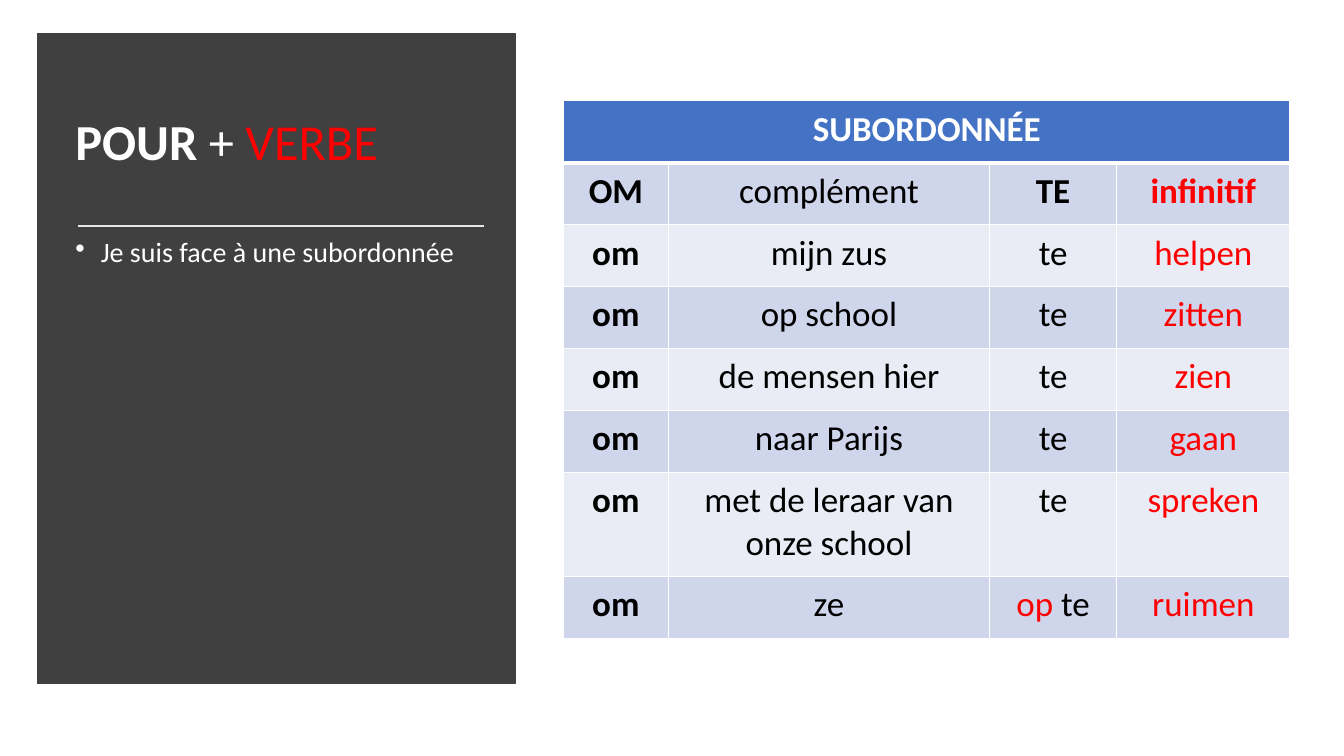
"""Build the slide on POUR + VERBE with its table of subordinate clauses."""
from dataclasses import dataclass
from lxml import etree
from pptx import Presentation
from pptx.dml.color import RGBColor
from pptx.enum import shapes, text
from pptx.oxml import ns
from pptx.util import Cm, Pt


@dataclass(frozen=True)
class Theme:
    font: str = "Calibri"
    panel: str = "404040"
    rule: str = "E7E6E6"
    head: str = "4472C4"
    bands: tuple = ("E9EBF5", "CFD5EA")
    white: str = "FFFFFF"
    black: str = "000000"
    red: str = "FF0000"
    title: int = 36
    body: int = 20
    cell: int = 25


theme = Theme()


def add_run(para, words, size, color, bold=False):
    run = para.add_run()
    run.text = words
    run.font.name = theme.font
    run.font.size = Pt(size)
    run.font.bold = bold
    run.font.color.rgb = RGBColor.from_string(color)


def add_edge(props, index, side, width):
    edge = etree.Element(ns.qn(f"a:ln{side}"), w=str(Pt(width)))
    fill = etree.SubElement(edge, ns.qn("a:solidFill"))
    etree.SubElement(fill, ns.qn("a:srgbClr"), val=theme.white)
    props.insert(index, edge)


deck = Presentation()
deck.slide_width, deck.slide_height = Cm(33.87), Cm(19.05)
slide = deck.slides.add_slide(deck.slide_layouts[6])

panel = slide.shapes.add_shape(
    shapes.MSO_SHAPE.RECTANGLE, Cm(0.94), Cm(0.84), Cm(12.04), Cm(16.38))
panel.shadow.inherit = False
panel.fill.solid()
panel.fill.fore_color.rgb = RGBColor.from_string(theme.panel)
panel.line.color.rgb = RGBColor.from_string(theme.panel)
panel.line.width = Pt(10)
panel.line.width = Pt(1)

title = slide.shapes.add_textbox(Cm(1.65), Cm(1.78), Cm(10.62), Cm(3.73))
title.text_frame.word_wrap = True
title.text_frame.vertical_anchor = text.MSO_ANCHOR.MIDDLE
para = title.text_frame.paragraphs[0]
para.line_spacing = 0.9
add_run(para, "POUR", theme.title, theme.white, True)
add_run(para, " + ", theme.title, theme.white)
add_run(para, "VERBE", theme.title, theme.red)

rule = slide.shapes.add_connector(
    shapes.MSO_CONNECTOR.STRAIGHT, Cm(1.96), Cm(5.69), Cm(12.19), Cm(5.69))
rule.line.color.rgb = RGBColor.from_string(theme.rule)
rule.line.width = Pt(1.75)
etree.SubElement(rule._element.spPr, ns.qn("a:effectLst"))

body = slide.shapes.add_textbox(Cm(1.65), Cm(5.89), Cm(10.62), Cm(10.49))
body.text_frame.word_wrap = True
para = body.text_frame.paragraphs[0]
para.line_spacing = 0.9
para.space_before = Pt(10)
props = para._p.get_or_add_pPr()
indent = Cm(0.64)
props.set("marL", str(indent))
props.set("indent", str(-indent))
etree.SubElement(props, ns.qn("a:buChar"), char="•")
add_run(para, "Je suis face à une subordonnée", theme.body, theme.white)

rows = [
    ("SUBORDONNÉE", "", "", ""),
    ("OM", "complément", "TE", "infinitif"),
    ("om", "mijn zus", "te", "helpen"),
    ("om", "op school", "te", "zitten"),
    ("om", "de mensen hier", "te", "zien"),
    ("om", "naar Parijs", "te", "gaan"),
    ("om", "met de leraar van onze school", "te", "spreken"),
    ("om", "ze", "op te", "ruimen"),
]
widths = (2.64, 8.1, 3.2, 4.37)
heights = [1.56] * 6 + [2.62, 1.56]
table = slide.shapes.add_table(
    len(rows), len(widths), Cm(14.2), Cm(2.54),
    Cm(sum(widths)), Cm(sum(heights))).table
for col, width in zip(table.columns, widths):
    col.width = Cm(width)
for row, height in zip(table.rows, heights):
    row.height = Cm(height)
table.cell(0, 0).merge(table.cell(0, 3))

for r, row in enumerate(rows):
    for c, words in enumerate(row):
        cell = table.cell(r, c)
        cell.margin_left = cell.margin_right = Cm(0.36)
        cell.margin_top = cell.margin_bottom = Cm(0.18)
        cell.fill.solid()
        color = theme.bands[r % 2] if r else theme.head
        cell.fill.fore_color.rgb = RGBColor.from_string(color)
        edges = {"L": 1, "R": 1, "T": 3 if r == 1 else 1, "B": 1 if r else 3}
        for index, (side, width) in enumerate(edges.items()):
            add_edge(cell._tc.get_or_add_tcPr(), index, side, width)
        para = cell.text_frame.paragraphs[0]
        para.alignment = text.PP_ALIGN.CENTER
        bold = c == 0 or (r == 1 and c != 1)
        ink = theme.red if c == 3 else theme.black if r else theme.white
        if words.startswith("op ") and c == 2:
            add_run(para, "op", theme.cell, theme.red)
            words = words.removeprefix("op")
        if words:
            add_run(para, words, theme.cell, ink, bold)

deck.save("out.pptx")
